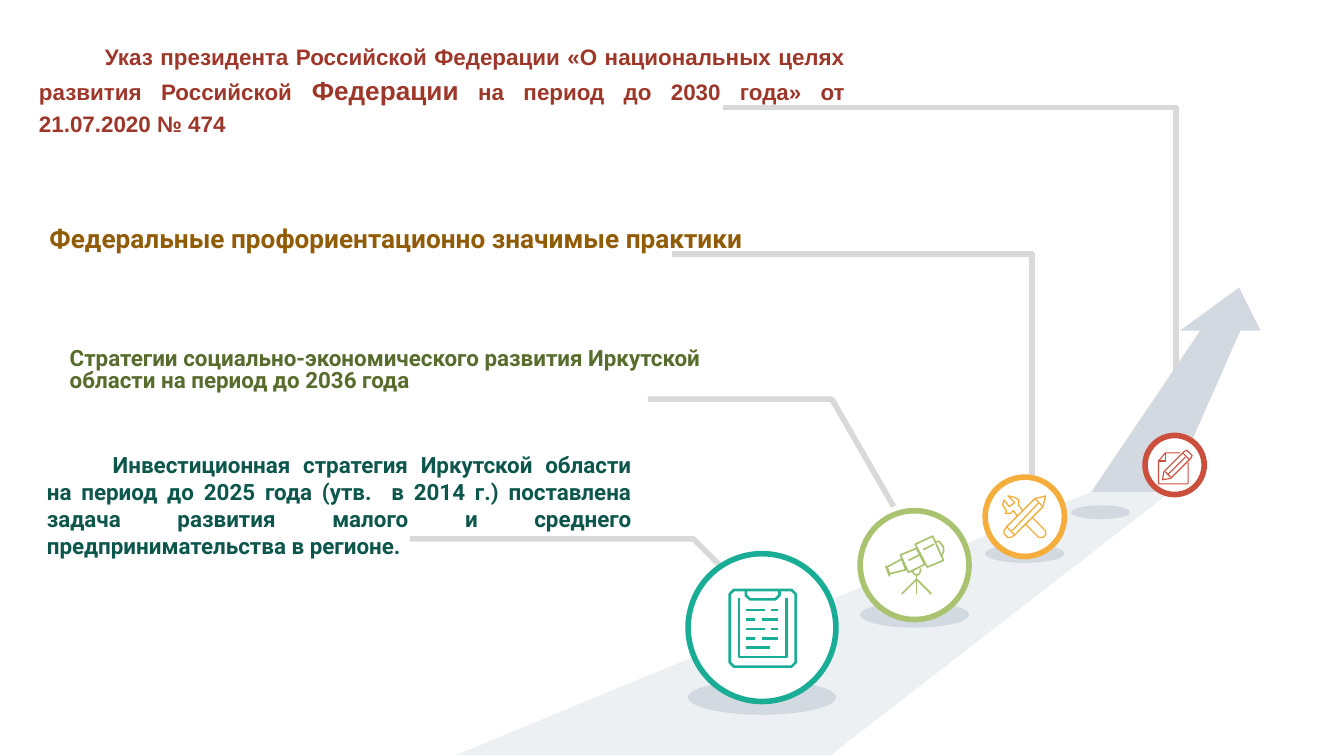
"""Build a slide of four strategy documents along a rising road, on a grid of 0.01 inch cells."""
from dataclasses import dataclass

from pptx import Presentation
from pptx.dml.color import RGBColor as RGB
from pptx.enum.shapes import MSO_SHAPE as Shape
from pptx.enum.text import MSO_AUTO_SIZE as AutoSize, PP_ALIGN as Align
from pptx.util import Inches, Pt

CELL = Inches(0.01)
COLS = 1000
ROWS = COLS * 9 / 16


@dataclass(frozen=True)
class Theme:
    """Colours and type sizes of the slide."""
    paper: str = "FFFFFF"
    leader: str = "D9D9D9"
    road: str = "EDF0F3"
    shade: str = "D3D9E0"
    teal: str = "1AAD96"
    green: str = "A9C370"
    amber: str = "F5AE3B"
    red: str = "CC4E3D"
    teal_text: str = "0D564B"
    green_text: str = "586C2D"
    amber_text: str = "915C07"
    red_text: str = "9D3729"
    body: int = 12
    large: int = 14
    stroke: float = 3


T = Theme()

LEADERS = [
    [(665, 377), (619, 297), (482, 297)],
    [(768, 386), (768, 189), (500, 189)],
    [(875, 290), (875, 80), (538, 80)],
    [(581, 466), (516, 401), (305, 401)],
]
ROAD = [(812, 366), (871, 366), (618, ROWS), (339, ROWS)]
ARROW = [(922, 214), (878, 246), (893, 246), (812, 366), (870, 366), (923, 246), (938, 246)]

# Circle left, top, diameter; shadow left, top; colour
STAGES = [
    (512, 412, 110, 512, 506, T.teal),
    (640, 380, 81, 640, 448, T.green),
    (852, 324, 44, 797, 376, T.red),
    (733, 355, 59, 733, 405, T.amber),
]


def clipboard():
    """Return the strokes of a clipboard with five written lines."""
    board = [(546, 439), (589, 439), (592, 442), (592, 493), (589, 496),
             (546, 496), (543, 493), (543, 442), (546, 439)]
    clip = [(555, 439), (555, 443), (558, 446), (577, 446), (580, 443), (580, 439)]
    page = [(550, 445), (550, 489), (585, 489), (585, 445)]
    long_first, short_first = [(555, 569), (574, 579)], [(555, 562), (567, 579)]
    rows = [long_first, short_first, long_first, short_first, [(555, 573)]]
    writing = [[(a, 453.5 + 7.2 * i), (b, 453.5 + 7.2 * i)]
               for i, row in enumerate(rows) for a, b in row]
    return [board, clip, page] + writing


TELESCOPE = [
    [(660, 422), (662, 427), (674, 424), (671, 416), (660, 422)],
    [(659, 421), (662, 429)],
    [(670, 413), (682, 408), (688, 420), (676, 426), (670, 413)],
    [(681, 405), (694, 399), (702, 417), (690, 422), (681, 405)],
    [(695, 403), (699, 403), (702, 407), (702, 411), (700, 414)],
    [(676, 417), (684, 413)],
    [(687, 409), (695, 405)],
    [(679, 425), (680, 427), (682, 428), (684, 427), (685, 425), (685, 423)],
    [(682, 428), (682, 442)],
    [(671, 442), (682, 431), (693, 442)],
]
TOOLS = [
    [(749, 392), (770, 371), (778, 369), (776, 377), (755, 398), (749, 392)],
    [(770, 371), (776, 377)],
    [(773, 374), (753, 395)],
    [(749, 392), (747, 395), (747, 397), (750, 400), (752, 400), (755, 398)],
    [(761, 380), (758, 376), (758, 372), (755, 370), (750, 369), (755, 374), (751, 377),
     (747, 372), (746, 376), (749, 380), (748, 382), (752, 382), (754, 380), (757, 384)],
    [(763, 390), (773, 400), (776, 400), (778, 398), (778, 395), (768, 385)],
]
NOTE = [
    [(878, 337), (867, 337), (862, 343), (862, 360), (884, 360), (884, 344)],
    [(867, 337), (867, 343), (862, 343)],
    [(866, 351), (881, 336), (883, 335), (887, 339), (886, 341), (871, 356),
     (865, 357), (866, 351)],
    [(867, 351), (871, 355)],
    [(869, 353), (882, 340)],
    [(880, 337), (885, 342)],
]
ICONS = [(TOOLS, T.amber, 0.7), (TELESCOPE, T.green, 0.9),
         (clipboard(), T.teal, 1.4), (NOTE, T.red, 0.6)]


def paint(sp, fill=None, line=None, width=T.stroke):
    """Set a shape's fill and line, either of which may be absent."""
    sp.shadow.inherit = False
    if fill:
        sp.fill.solid()
        sp.fill.fore_color.rgb = RGB.from_string(fill)
    else:
        sp.fill.background()
    if line:
        sp.line.color.rgb = RGB.from_string(line)
        sp.line.width = Pt(width)
    else:
        sp.line.fill.background()


def draw_paths(s, paths, close=False, **look):
    """Draw one freeform made of one or more paths of grid points."""
    builder = s.shapes.build_freeform(*paths[0][0], scale=CELL)
    for i, points in enumerate(paths):
        if i:
            builder.move_to(*points[0])
        builder.add_line_segments(points[1:], close=close)
    paint(builder.convert_to_shape(), **look)


def grid_box(left, top, width, height):
    """Convert a box in grid cells to lengths."""
    return [round(v * CELL) for v in (left, top, width, height)]


def add_ellipse(s, box, **look):
    """Add an ellipse in a grid box."""
    paint(s.shapes.add_shape(Shape.OVAL, *grid_box(*box)), **look)


def add_stage(s, left, top, size, shadow_left, shadow_top, color):
    """Add a ringed circle above its flat shadow."""
    add_ellipse(s, (shadow_left, shadow_top, size, size * 0.235), fill=T.shade)
    add_ellipse(s, (left, top, size, size), fill=T.paper, line=color)


def add_text(s, box, pieces, color, font="Roboto", spacing=None, indent=0, inset=None):
    """Add a bold paragraph of (text, size) pieces; an indented one is justified."""
    tf = s.shapes.add_textbox(*grid_box(*box)).text_frame
    tf.word_wrap = True
    if inset:
        tf.margin_left = tf.margin_right = inset[0] * CELL
        tf.margin_top = tf.margin_bottom = inset[1] * CELL
    else:
        tf.auto_size = AutoSize.SHAPE_TO_FIT_TEXT
    p = tf.paragraphs[0]
    if spacing:
        p.line_spacing = spacing
    if indent:
        p.alignment = Align.JUSTIFY
        pPr = p._p.get_or_add_pPr()
        pPr.set("marL", "0")
        pPr.set("indent", str(indent * CELL))
    for text, size in pieces:
        r = p.add_run()
        r.text = text
        r.font.name, r.font.size, r.font.bold = font, Pt(size), True
        r.font.color.rgb = RGB.from_string(color)


def main():
    """Build and save the slide."""
    prs = Presentation()
    prs.slide_width, prs.slide_height = COLS * CELL, round(ROWS * CELL)
    s = prs.slides.add_slide(prs.slide_layouts[6])
    for points in LEADERS:
        draw_paths(s, [points], line=T.leader)
    draw_paths(s, [ROAD], close=True, fill=T.road)
    draw_paths(s, [ARROW], close=True, fill=T.shade)
    for stage in STAGES:
        add_stage(s, *stage)
    for strokes, color, width in ICONS:
        draw_paths(s, strokes, line=color, width=width)
    add_text(s, (25, 27, 608, 63), [
        ("Указ президента Российской Федерации «О национальных целях развития Российской ", T.body),
        ("Федерации", T.large),
        (" на период до 2030 года» от 21.07.2020 № 474", T.body),
    ], T.red_text, font="Arial", spacing=1.15, indent=49, inset=(4, 2))
    add_text(s, (27, 165, 636, 29), [
        ("Федеральные профориентационно значимые практики", T.large)], T.amber_text, spacing=0.8)
    add_text(s, (42, 255, 551, 42), [
        ("Стратегии социально-экономического развития Иркутской области на период до 2036 года",
         T.body)], T.green_text, spacing=0.8)
    add_text(s, (25, 331, 455, 91), [
        ("Инвестиционная стратегия Иркутской области на период до 2025 года (утв.  в 2014 г.) "
         "поставлена задача развития малого и среднего предпринимательства в регионе.", T.body),
    ], T.teal_text, indent=49)
    prs.save("out.pptx")


if __name__ == "__main__":
    main()
